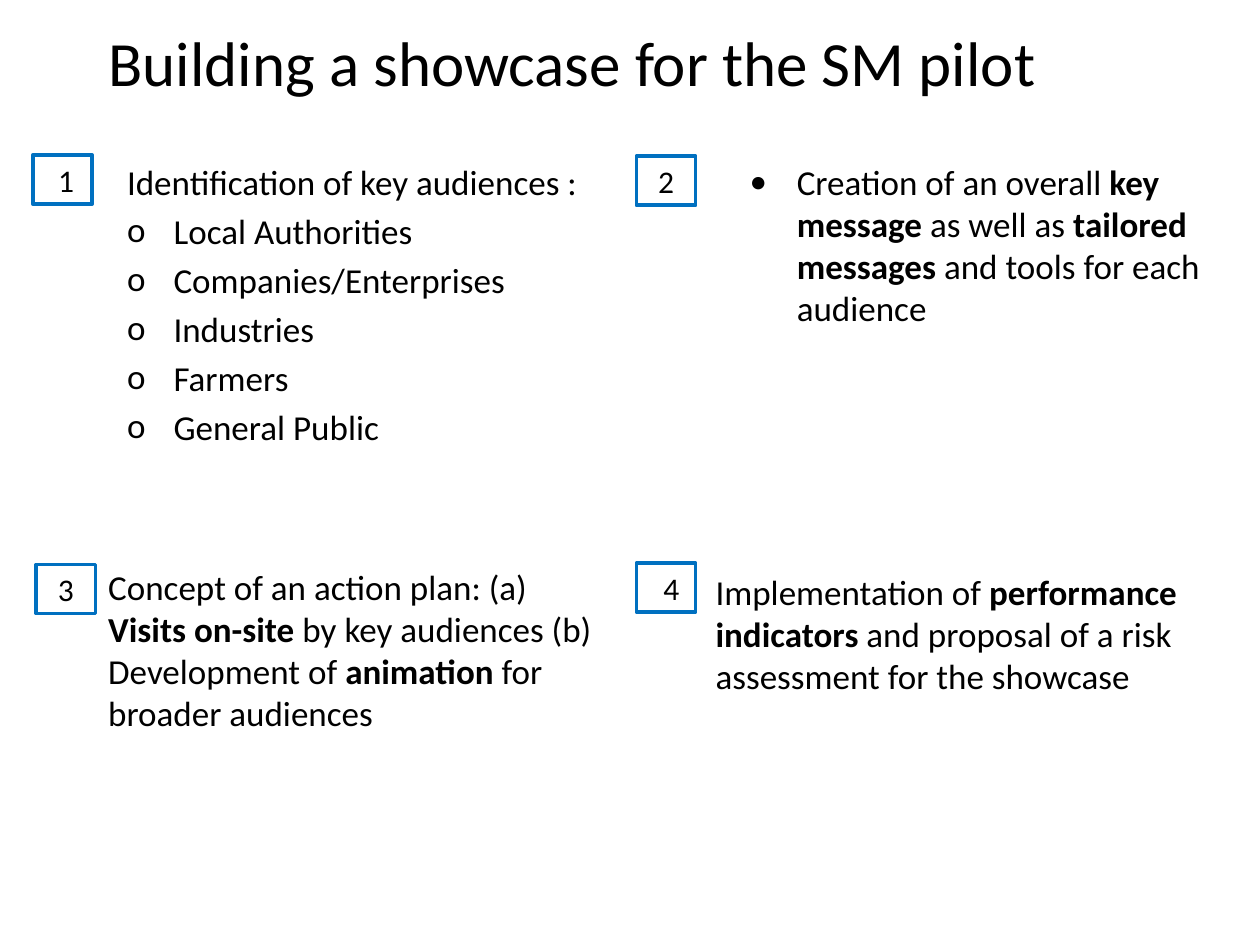
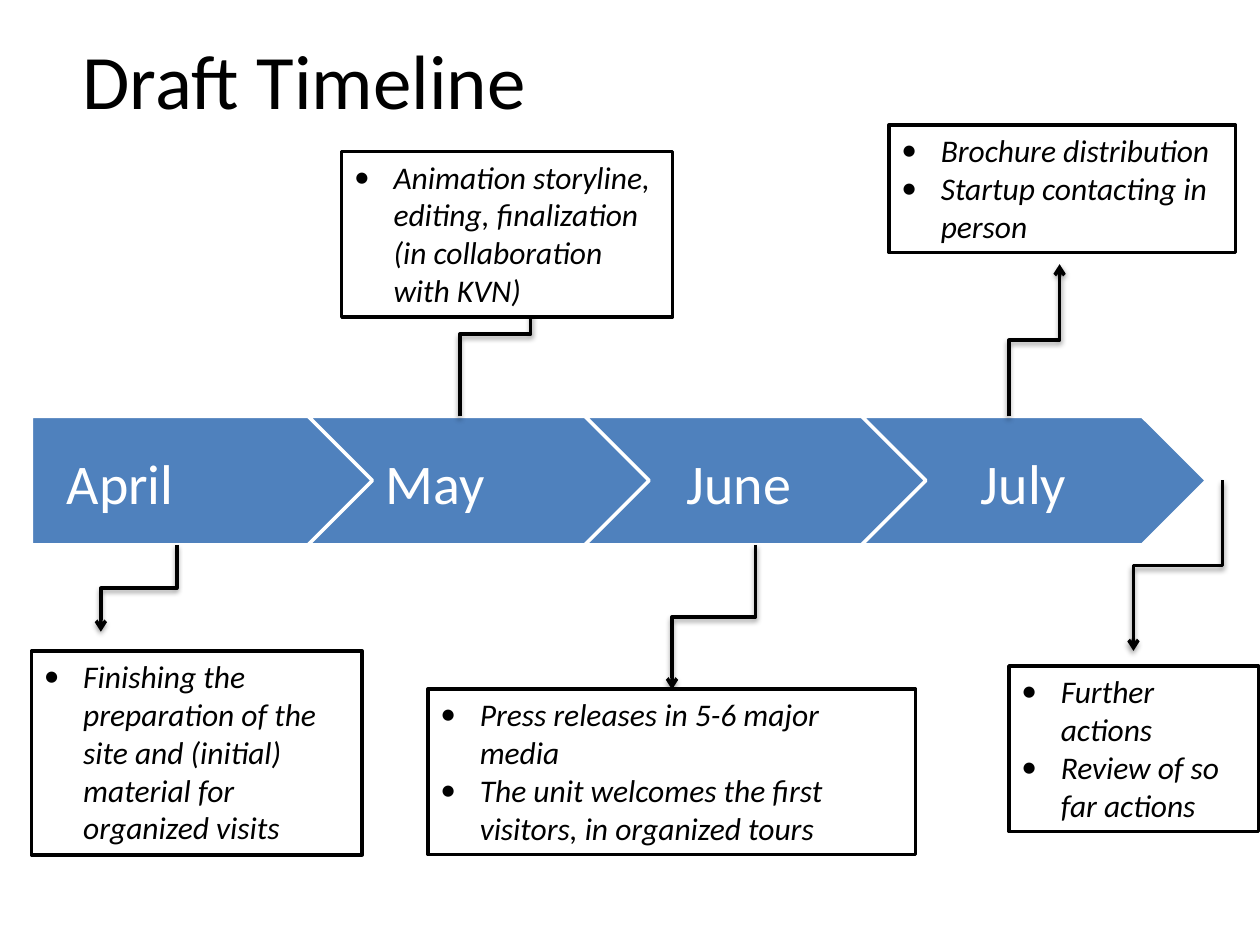
from dataclasses import dataclass

from lxml.etree import SubElement
from pptx import Presentation
from pptx.dml.color import RGBColor
from pptx.enum.shapes import MSO_CONNECTOR, MSO_SHAPE
from pptx.enum.text import MSO_ANCHOR, PP_ALIGN
from pptx.oxml.ns import qn
from pptx.util import Pt


@dataclass(frozen=True)
class Theme:
    font: str = "Calibri"
    black: RGBColor = RGBColor(0x00, 0x00, 0x00)
    white: RGBColor = RGBColor(0xFF, 0xFF, 0xFF)
    badge_line: RGBColor = RGBColor(0x00, 0x70, 0xC0)
    arrow_fill: RGBColor = RGBColor(0x4F, 0x81, 0xBD)
    line_width: float = 2
    showcase_title: int = 36
    timeline_title: int = 44
    month: int = 32
    body: int = 20
    note: int = 18


THEME = Theme()


# Shared helpers
def apply_format(target, values):
    for name, value in values.items():
        setattr(target, name, value)


def add_bullet(para, symbol, indent):
    properties = para._p.get_or_add_pPr()
    properties.set("marL", str(Pt(indent)))
    properties.set("indent", str(-Pt(indent)))
    SubElement(properties, qn("a:buFont")).set("typeface", THEME.font)
    SubElement(properties, qn("a:buChar")).set("char", symbol)


def write_para(frame, text, size, color=THEME.black, italic=False,
               align=PP_ALIGN.LEFT, bullet=None, indent=0, space=0):
    """Write one paragraph; parts between asterisks are bold."""
    first = frame.paragraphs[0]
    para = frame.add_paragraph() if first.runs else first
    apply_format(para, {"alignment": align, "space_before": Pt(space)})
    if bullet:
        add_bullet(para, bullet, indent)
    for number, part in enumerate(text.split("*")):
        if part:
            span = para.add_run()
            span.text = part
            apply_format(span.font, {"name": THEME.font, "size": Pt(size),
                                     "bold": number % 2 == 1, "italic": italic})
            span.font.color.rgb = color


def add_text_box(page, box, anchor=MSO_ANCHOR.TOP):
    frame = page.shapes.add_textbox(*map(Pt, box)).text_frame
    apply_format(frame, {"word_wrap": True, "vertical_anchor": anchor})
    return frame


def add_outlined_shape(page, kind, box, fill, line):
    shape = page.shapes.add_shape(kind, *map(Pt, box))
    shape.shadow.inherit = False
    shape.fill.solid()
    shape.fill.fore_color.rgb = fill
    shape.line.color.rgb = line
    shape.line.width = Pt(THEME.line_width)
    return shape


def add_title(page, text, box, size):
    frame = add_text_box(page, box, MSO_ANCHOR.MIDDLE)
    write_para(frame, text, size, align=PP_ALIGN.CENTER)


# Showcase slide
def add_badge(page, number, left, top, nudge):
    badge = add_outlined_shape(page, MSO_SHAPE.RECTANGLE, (left, top, 34, 28),
                               THEME.white, THEME.badge_line)
    frame = badge.text_frame
    # A wider left margin moves the digit right by the nudge
    apply_format(frame, {"margin_left": Pt(7.2 + 2 * nudge),
                         "vertical_anchor": MSO_ANCHOR.MIDDLE})
    write_para(frame, str(number), THEME.note, align=PP_ALIGN.CENTER)


def add_step(page, number, badge, text_box, paragraphs):
    add_badge(page, number, *badge)
    frame = add_text_box(page, text_box)
    for text, options in paragraphs:
        write_para(frame, text, THEME.body, **options)


def add_showcase_slide(deck):
    page = deck.slides.add_slide(deck.slide_layouts[6])
    add_title(page, "Building a showcase for the SM pilot",
              (21, 10, 612, 50.5), THEME.showcase_title)

    audience_format = {"bullet": "o", "indent": 26.6, "space": 4,
                       "align": PP_ALIGN.JUSTIFY}
    audiences = ["Local Authorities", "Companies/Enterprises", "Industries",
                 "Farmers", "General Public"]
    # Badge left, top and digit nudge; text box; paragraphs
    steps = [
        ((18.7, 88.6, 2), (65.5, 88, 278, 348),
         [("Identification of key audiences :", {})]
         + [(audience, audience_format) for audience in audiences]),
        ((363.6, 89.3, 0), (421.2, 88, 298.8, 137),
         [("Creation of an overall *key message* as well as "
           "*tailored messages* and tools for each audience",
           {"bullet": "•", "indent": 27})]),
        ((20.6, 322.6, 0), (54.7, 319.7, 298.8, 137),
         [("Concept of an action plan: (a) *Visits on-site* by key audiences "
           "(b) Development of *animation* for broader audiences", {})]),
        ((363.6, 321.8, 3), (401.8, 322.6, 301.7, 80),
         [("Implementation of *performance indicators* and proposal of "
           "a risk assessment for the showcase", {})]),
    ]
    for number, step in enumerate(steps, start=1):
        add_step(page, number, *step)


# Timeline slide
def add_month_band(page, box, months):
    left, top, width, height = box
    overlap = 39
    arrow_width = (width + overlap * (len(months) - 1)) / len(months)
    for place, (month, text_offset) in enumerate(months):
        kind = MSO_SHAPE.CHEVRON if place else MSO_SHAPE.PENTAGON
        arrow_left = left + place * (arrow_width - overlap)
        add_outlined_shape(page, kind, (arrow_left, top, arrow_width, height),
                           THEME.arrow_fill, THEME.white)
        frame = add_text_box(page, (arrow_left + text_offset, top + 15, 145, 46))
        write_para(frame, month, THEME.month, THEME.white)


def add_elbow_arrow(page, start, end):
    """Draw an elbow that leaves and arrives vertically."""
    (x1, y1), (x2, y2) = start, end
    middle_x, middle_y = (x1 + x2) / 2, (y1 + y2) / 2
    half_x, half_y = (x2 - x1) / 2, (y2 - y1) / 2
    # Lay the elbow on its side, then turn it a quarter clockwise
    corners = (middle_x - half_y, middle_y + half_x,
               middle_x + half_y, middle_y - half_x)
    elbow = page.shapes.add_connector(MSO_CONNECTOR.ELBOW, *map(Pt, corners))
    elbow.line.color.rgb = THEME.black
    elbow.line.width = Pt(THEME.line_width)
    properties = elbow._element.spPr
    properties.find(qn("a:xfrm")).set("rot", "5400000")
    SubElement(properties.find(qn("a:ln")), qn("a:tailEnd")).set("type", "arrow")
    # Soft shadow below the line
    effects = SubElement(properties, qn("a:effectLst"))
    shadow = SubElement(effects, qn("a:outerShdw"), blurRad=str(Pt(3.1)),
                        dist=str(Pt(1.6)), dir="5400000", rotWithShape="0")
    color = SubElement(shadow, qn("a:srgbClr"), val=str(THEME.black))
    SubElement(color, qn("a:alpha"), val="38000")


def add_note(page, box, items):
    note = add_outlined_shape(page, MSO_SHAPE.RECTANGLE, box,
                              THEME.white, THEME.black)
    apply_format(note.text_frame, {"word_wrap": True,
                                   "vertical_anchor": MSO_ANCHOR.TOP})
    for item in items:
        write_para(note.text_frame, item, THEME.note, italic=True,
                   bullet="•", indent=22.5)


def add_timeline_slide(deck):
    page = deck.slides.add_slide(deck.slide_layouts[6])
    add_title(page, "Draft Timeline", (37.4, 0, 273, 90), THEME.timeline_title)

    # Month names with their text offset inside each arrow
    band_top, band_height = 237.9, 73.4
    add_month_band(page, (18, band_top, 671.5, band_height),
                   [("April", 13), ("May", 37), ("June", 51), ("July", 61)])

    # Arrows between the band and the notes
    band_bottom = band_top + band_height
    arrows = [
        ((101, band_bottom), (57.6, 361)),
        ((431.7, band_bottom), (384, 394)),
        ((262.8, band_top), (303.2, 144)),
        ((576.6, band_top), (605.5, 151)),
        ((698.6, band_top + band_height / 2), (647.7, 372)),
    ]
    for start, end in arrows:
        add_elbow_arrow(page, start, end)

    notes = [
        ((18, 372, 189, 116.5),
         ["Finishing the preparation of the site and (initial) material "
          "for organized visits"]),
        ((576.6, 380.6, 142.7, 94.5),
         ["Further actions", "Review of so far actions"]),
        ((508, 71.5, 198, 72.8),
         ["Brochure distribution", "Startup contacting in person"]),
        ((195.3, 86.6, 189, 94.5),
         ["Animation storyline, editing, finalization "
          "(in collaboration with KVN)"]),
        ((244.6, 393.8, 278.6, 94.5),
         ["Press releases in 5-6 major media",
          "The unit welcomes the first visitors, in organized tours"]),
    ]
    for box, items in notes:
        add_note(page, box, items)


def main():
    deck = Presentation()
    apply_format(deck, {"slide_width": Pt(720), "slide_height": Pt(540)})
    add_showcase_slide(deck)
    add_timeline_slide(deck)
    deck.save("out.pptx")


if __name__ == "__main__":
    main()
